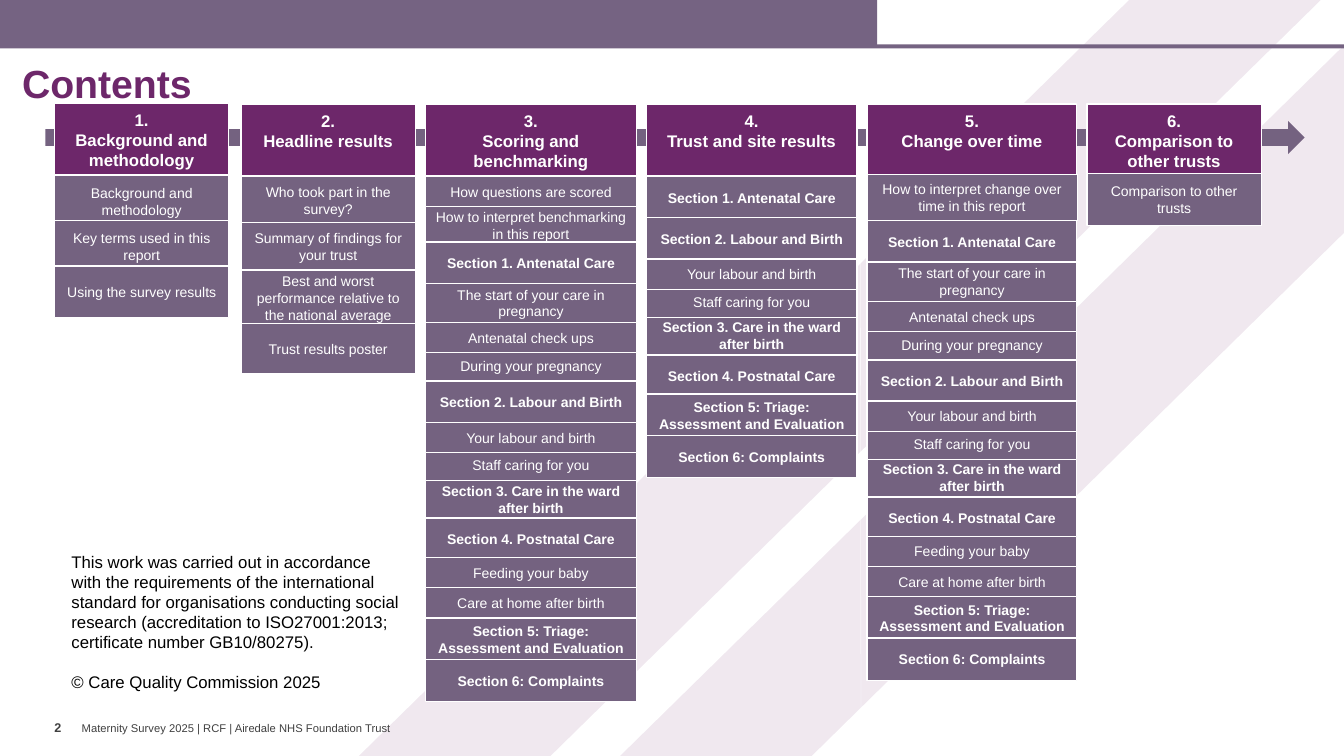
"""Build the contents slide: six chapters of a maternity survey report along an arrow."""
from dataclasses import dataclass
from typing import Any

from lxml.etree import SubElement
from pptx import Presentation
from pptx.dml.color import RGBColor
from pptx.enum.shapes import MSO_CONNECTOR as Connector, MSO_SHAPE as Preset
from pptx.enum.text import MSO_ANCHOR as Anchor, PP_ALIGN as Align
from pptx.oxml.ns import qn
from pptx.util import Inches, Length, Pt

GRID_COLUMNS, GRID_ROWS = 1333, 750
PLUM = RGBColor(0x6D, 0x27, 0x6A)
MAUVE = RGBColor(0x74, 0x62, 0x80)
BANNER = RGBColor(0x75, 0x63, 0x82)
WHITE = RGBColor(0xFF, 0xFF, 0xFF)
BLACK = RGBColor(0x00, 0x00, 0x00)
GREY = RGBColor(0x40, 0x40, 0x40)


@dataclass(frozen=True)
class Area:
    left: int
    top: int
    width: int
    height: int


@dataclass(frozen=True)
class TextStyle:
    size: float
    color: RGBColor
    bold: bool = False
    align: Align = Align.LEFT
    space_before: float = 0


@dataclass(frozen=True)
class Topic:
    """A tile; pitch is the step to the next tile, higher layers overlap lower ones."""
    title: str
    pitch: int
    height: int
    bold: bool = False
    layer: int = 0
    outline: float = 1


@dataclass(frozen=True)
class Chapter:
    title: str
    left: int
    width: int
    heading_top: int
    topics_top: int
    topics: tuple[Topic, ...]


HEADING = TextStyle(12, WHITE, True, Align.CENTER)
HEADING_HEIGHT = 71

ANTENATAL = Topic("Section 1. Antenatal Care", 41, 42, True)
PREGNANCY = (
    Topic("The start of your care in pregnancy", 39, 39),
    Topic("Antenatal check ups", 28, 30, layer=1),
    Topic("During your pregnancy", 30, 30),
)
LABOUR_TO_POSTNATAL = (
    Topic("Section 2. Labour and Birth", 41, 42, True, 1),
    Topic("Your labour and birth", 27, 30, layer=2),
    Topic("Staff caring for you", 28, 31, layer=1),
    Topic("Section 3. Care in the ward after birth", 40, 42, True),
    Topic("Section 4. Postnatal Care", 39, 42, True, 1),
)
HOME = (
    Topic("Feeding your baby", 28, 30, layer=2),
    Topic("Care at home after birth", 32, 34, layer=1),
)
CLOSING = (
    Topic("Section 5: Triage: Assessment and Evaluation", 41, 42, True, 2),
    Topic("Section 6: Complaints", 42, 42, True, 2),
)
ALL_SECTIONS = (ANTENATAL, *PREGNANCY, *LABOUR_TO_POSTNATAL, *HOME, *CLOSING)

CHAPTERS = (
    Chapter("Background and methodology", 54, 173, 102, 174, (
        Topic("Background and methodology", 45, 51),
        Topic("Key terms used in this report", 45, 51),
        Topic("Using the survey results", 45, 51),
    )),
    Chapter("Headline results", 239, 173, 103, 175, (
        Topic("Who took part in the survey?", 46, 47),
        Topic("Summary of findings for your trust", 47, 47),
        Topic("Best and worst performance relative to the national average", 53, 55),
        Topic("Trust results poster", 50, 50),
    )),
    Chapter("Scoring and benchmarking", 422, 209, 103, 175, (
        Topic("How questions are scored", 29, 30, layer=1),
        Topic("How to interpret benchmarking in this report", 36, 39),
        *ALL_SECTIONS,
    )),
    Chapter("Trust and site results", 641, 209, 103, 175,
            (ANTENATAL, *LABOUR_TO_POSTNATAL, *CLOSING)),
    Chapter("Change over time", 860, 208, 103, 173, (
        Topic("How to interpret change over time in this report", 46, 46, outline=0.25),
        *ALL_SECTIONS,
    )),
    Chapter("Comparison to other trusts", 1078, 173, 103, 172, (
        Topic("Comparison to other trusts", 52, 52),
    )),
)

BANDS = (
    ((1120, 0), (1310, 0), (546, 750), (356, 750)),
    ((1333, 45), (1333, 231), (805, 750), (615, 750)),
)
DIVIDERS = ((629, 169, 630, 698), (853, 173, 854, 702))

deck = Presentation()
deck.slide_width, deck.slide_height = Inches(13.33), Inches(7.5)
slide = deck.slides.add_slide(deck.slide_layouts[6])


def across(columns: float) -> Length:
    return Length(round(deck.slide_width * columns / GRID_COLUMNS))


def down(rows: float) -> Length:
    return Length(round(deck.slide_height * rows / GRID_ROWS))


def place(area: Area) -> tuple[Length, Length, Length, Length]:
    return across(area.left), down(area.top), across(area.width), down(area.height)


def write(shape: Any, lines: tuple[str, ...], style: TextStyle, **frame_format: Any) -> None:
    frame = shape.text_frame
    for name, value in {"word_wrap": True, **frame_format}.items():
        setattr(frame, name, value)
    font_format = {"name": "Arial", "size": Pt(style.size), "bold": style.bold}
    for index, line in enumerate(lines):
        paragraph = frame.add_paragraph() if index else frame.paragraphs[0]
        paragraph.alignment = style.align
        if index and style.space_before:
            paragraph.space_before = Pt(style.space_before)
        run = paragraph.add_run()
        run.text = line
        for name, value in font_format.items():
            setattr(run.font, name, value)
        run.font.color.rgb = style.color


def draw_block(area: Area, fill: RGBColor, outline: float = 0, preset: Preset = Preset.RECTANGLE) -> Any:
    block = slide.shapes.add_shape(preset, *place(area))
    block.shadow.inherit = False
    block.fill.solid()
    block.fill.fore_color.rgb = fill
    if outline:
        block.line.color.rgb = WHITE
        block.line.width = Pt(outline)
    else:
        block.line.fill.background()
    return block


def draw_band(corners: tuple[tuple[int, int], ...]) -> None:
    start, *others = [(across(x), down(y)) for x, y in corners]
    builder = slide.shapes.build_freeform(*start)
    builder.add_line_segments(others, close=True)
    band = builder.convert_to_shape()
    band.shadow.inherit = False
    band.line.fill.background()
    band.fill.solid()
    band.fill.fore_color.rgb = PLUM
    tint = next(band.element.spPr.iter(qn("a:srgbClr")))
    SubElement(tint, qn("a:alpha"), val="10000")


def draw_divider(x1: int, y1: int, x2: int, y2: int) -> None:
    divider = slide.shapes.add_connector(Connector.STRAIGHT, across(x1), down(y1), across(x2), down(y2))
    divider.line.color.rgb = WHITE
    divider.line.width = Pt(0.25)
    SubElement(divider.element.spPr, qn("a:effectLst"))


def draw_text(area: Area, lines: tuple[str, ...], style: TextStyle, **frame_format: Any) -> None:
    write(slide.shapes.add_textbox(*place(area)), lines, style, **frame_format)


def draw_chapter(number: int, chapter: Chapter) -> None:
    heading = draw_block(Area(chapter.left, chapter.heading_top, chapter.width, HEADING_HEIGHT), PLUM, 1)
    write(heading, (f"{number}.", chapter.title), HEADING, vertical_anchor=Anchor.TOP, margin_top=down(7))
    top, tiles = chapter.topics_top, []
    for topic in chapter.topics:
        tiles.append((topic, Area(chapter.left, top, chapter.width, topic.height)))
        top += topic.pitch
    for topic, area in sorted(tiles, key=lambda tile: tile[0].layer):
        write(draw_block(area, MAUVE, topic.outline), (topic.title,),
              TextStyle(10, WHITE, topic.bold, Align.CENTER), vertical_anchor=Anchor.MIDDLE)


def main() -> None:
    for corners in BANDS:
        draw_band(corners)
    for banner in (Area(-3, 44, 1336, 4), Area(-3, -2, 873, 47)):
        draw_block(banner, BANNER)
    draw_block(Area(45, 120, 1249, 33), MAUVE, preset=Preset.RIGHT_ARROW)
    for divider in DIVIDERS:
        draw_divider(*divider)
    draw_text(Area(12, 56, 912, 53), ("Contents",), TextStyle(28, PLUM, True), vertical_anchor=Anchor.MIDDLE)
    for number, chapter in enumerate(CHAPTERS, 1):
        draw_chapter(number, chapter)
    draw_text(Area(61, 542, 351, 172), (
        "This work was carried out in accordance with the requirements of the international standard for "
        "organisations conducting social research (accreditation to ISO27001:2013; certificate number GB10/80275).",
        "© Care Quality Commission 2025",
    ), TextStyle(12, BLACK, space_before=13.8))
    draw_text(Area(54, 709, 25, 40), ("2",), TextStyle(9, GREY, True), word_wrap=False, margin_left=0, margin_right=0)
    draw_text(Area(81, 716, 311, 13), ("Maternity Survey 2025 | RCF | Airedale NHS Foundation Trust",),
              TextStyle(8, GREY), word_wrap=False, vertical_anchor=Anchor.MIDDLE,
              margin_left=0, margin_right=0, margin_top=0, margin_bottom=0)
    deck.save("out.pptx")


if __name__ == "__main__":
    main()
